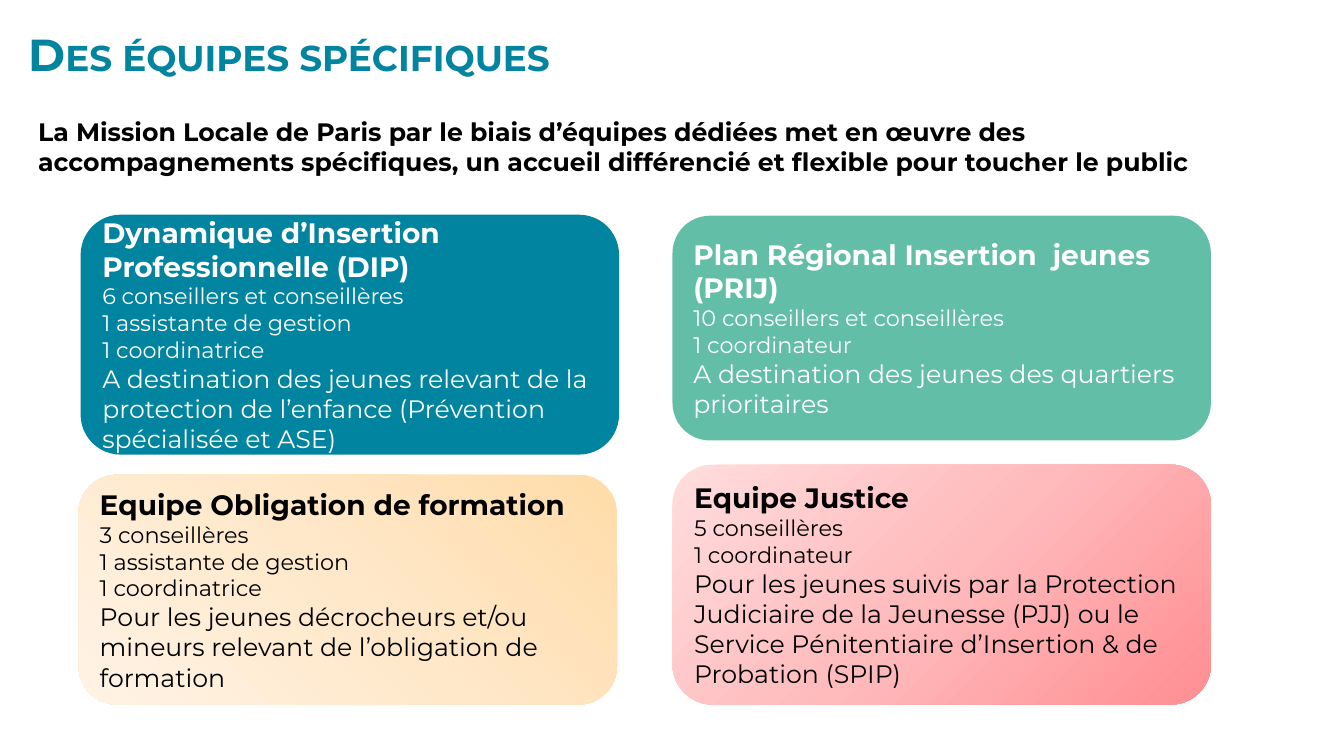
import pptx
import pptx.util
import pptx.oxml
import pptx.oxml.ns
import pptx.dml.color
import pptx.enum.shapes
import pptx.enum.text
from pptx.util import Inches

ALIGN = pptx.enum.text.PP_ALIGN
ANCHOR = pptx.enum.text.MSO_ANCHOR
ROUND = pptx.enum.shapes.MSO_SHAPE.ROUNDED_RECTANGLE


def color(code):
    return pptx.dml.color.RGBColor.from_string(code)


def style(para, size, code, bold=False):
    para.alignment = ALIGN.LEFT
    for run in para.runs:
        run.font.name = "Montserrat"
        run.font.size = pptx.util.Pt(size)
        run.font.bold = bold
        run.font.color.rgb = color(code)


deck = pptx.Presentation()
deck.slide_width = Inches(13.33)
deck.slide_height = Inches(7.5)
slide = deck.slides.add_slide(deck.slide_layouts[5])

title = slide.shapes.title
title.left, title.top = Inches(0.18), Inches(0.17)
title.width, title.height = Inches(6.14), Inches(0.8)
title.text_frame.text = "Des équipes spécifiques"
title.text_frame.vertical_anchor = ANCHOR.MIDDLE
head = title.text_frame.paragraphs[0]
head.line_spacing = 0.9
style(head, 32, "00849F", True)
head.runs[0]._r.get_or_add_rPr().set("cap", "small")

intro = slide.shapes.add_textbox(Inches(0.28), Inches(1.1), Inches(11.73), Inches(1.04))
intro.text_frame.word_wrap = True
intro.text_frame.text = (
    "La Mission Locale de Paris par le biais d’équipes dédiées met en œuvre des "
    "accompagnements spécifiques, un accueil différencié et flexible pour toucher le public"
)
style(intro.text_frame.paragraphs[0], 18, "000000", True)

LINEAR = '<a:lin ang="8100000" scaled="1"/>'
RADIAL = '<a:path path="circle"><a:fillToRect l="100000" t="100000"/></a:path>'

teams = [
    (0.8, 2.13, 2.38, ["00849F"], "", "FFFFFF",
     "Dynamique d’Insertion Professionnelle (DIP)",
     ["6 conseillers et conseillères", "1 assistante de gestion", "1 coordinatrice"],
     "A destination des jeunes relevant de la protection de l’enfance (Prévention spécialisée et ASE)"),
    (0.78, 4.71, 2.28, ["FFDCA9", "FFE8CA", "FFF3E5"], LINEAR, "000000",
     "Equipe Obligation de formation",
     ["3 conseillères", "1 assistante de gestion", "1 coordinatrice"],
     "Pour les jeunes décrocheurs et/ou mineurs relevant de l’obligation de formation"),
    (6.67, 4.61, 2.38, ["FF8E92", "FFBABC", "FFDDDE"], RADIAL, "000000",
     "Equipe Justice",
     ["5 conseillères", "1 coordinateur"],
     "Pour les jeunes suivis par la Protection Judiciaire de la Jeunesse (PJJ) ou le "
     "Service Pénitentiaire d’Insertion & de Probation (SPIP)"),
    (6.67, 2.14, 2.23, ["63BEA7"], "", "FFFFFF",
     "Plan Régional Insertion  jeunes (PRIJ)",
     ["10 conseillers et conseillères", "1 coordinateur"],
     "A destination des jeunes des quartiers prioritaires"),
]

for left, top, height, fills, shade, ink, name, staff, goal in teams:
    card = slide.shapes.add_shape(ROUND, Inches(left), Inches(top), Inches(5.34), Inches(height))
    card.shadow.inherit = False
    card.line.fill.background()
    if shade:
        stops = "".join(
            f'<a:gs pos="{step * 50000}"><a:srgbClr val="{code}"/></a:gs>'
            for step, code in enumerate(fills)
        )
        grad = pptx.oxml.parse_xml(
            f'<a:gradFill {pptx.oxml.ns.nsdecls("a")} rotWithShape="1">'
            f"<a:gsLst>{stops}</a:gsLst>{shade}</a:gradFill>"
        )
        card._element.spPr.find(pptx.oxml.ns.qn("a:prstGeom")).addnext(grad)
    else:
        card.fill.solid()
        card.fill.fore_color.rgb = color(fills[0])

    frame = card.text_frame
    frame.word_wrap = True
    frame.vertical_anchor = ANCHOR.MIDDLE
    frame.text = "\n".join([name, *staff, goal])
    sizes = [20] + [16] * len(staff) + [18]
    for para, size in zip(frame.paragraphs, sizes):
        style(para, size, ink, size == 20)

deck.save("out.pptx")
